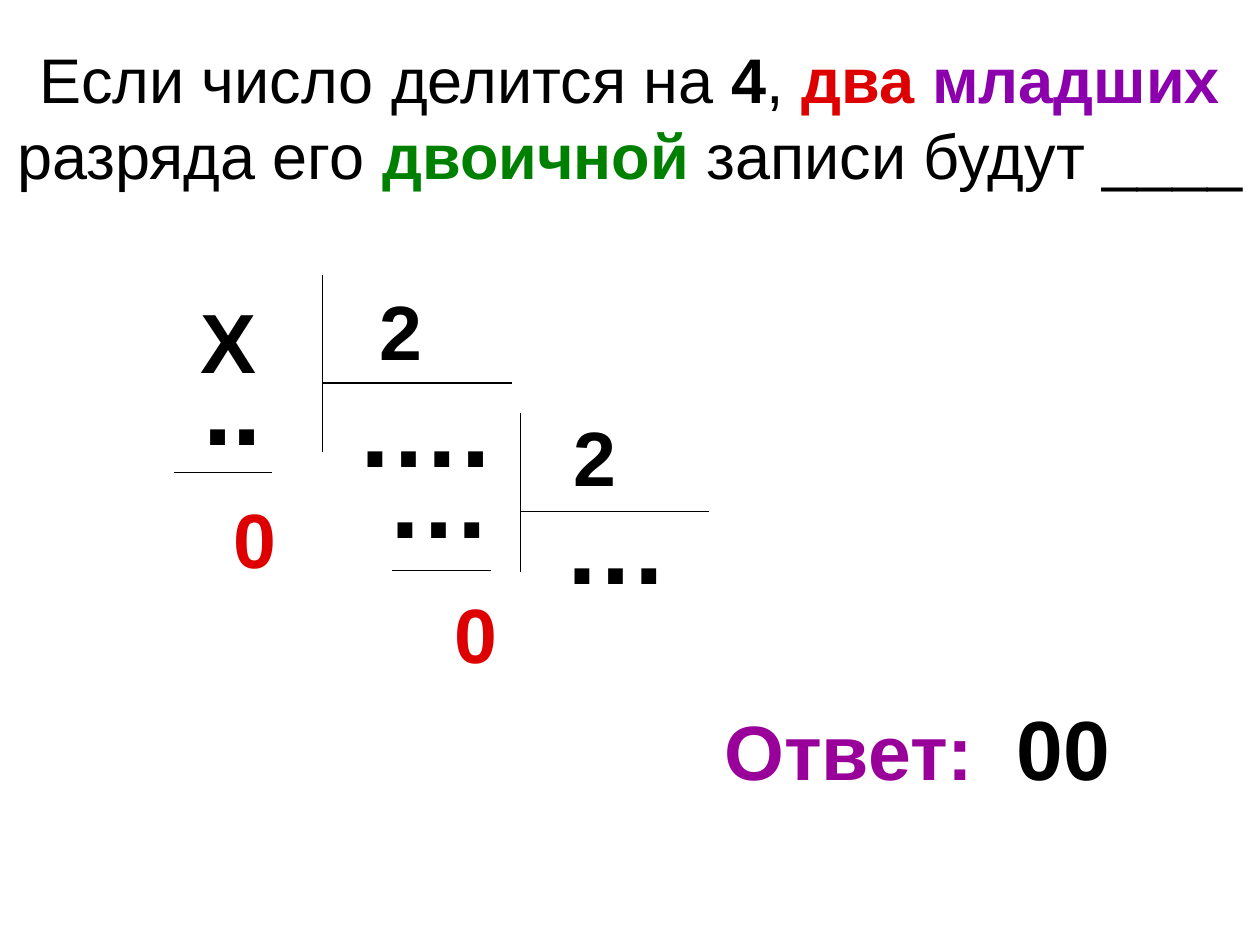
from pptx import Presentation
from pptx.dml.color import RGBColor
from pptx.enum.shapes import MSO_CONNECTOR as Connector
from pptx.enum.text import MSO_ANCHOR as Anchor, PP_ALIGN as Align
from pptx.oxml.ns import qn
from pptx.util import Inches, Pt
from lxml.etree import SubElement

BLACK = RGBColor(0x00, 0x00, 0x00)
RED = RGBColor(0xDE, 0x00, 0x00)
VIOLET = RGBColor(0x8B, 0x00, 0xAC)
GREEN = RGBColor(0x00, 0x80, 0x00)
PURPLE = RGBColor(0x99, 0x00, 0x99)

TITLE_RUNS = [
    ("Если число делится на ", 36, BLACK, False),
    ("4", 36, BLACK, True),
    (", ", 36, BLACK, False),
    ("два ", 36, RED, True),
    ("младших", 36, VIOLET, True),
    (" разряда его ", 36, BLACK, False),
    ("двоичной", 36, GREEN, True),
    (" записи будут ____", 36, BLACK, False),
]
ANSWER_RUNS = [("Ответ:  ", 44, PURPLE, True), ("00", 48, BLACK, True)]

DIVISION_TEXTS = [
    ("Х", 1.38, 2.25, 0.87, 0.9, 48, BLACK, Align.CENTER),
    ("2", 2.75, 2.2, 0.87, 0.83, 44, BLACK, Align.CENTER),
    ("….", 2.61, 2.83, 1.5, 1.1, 60, BLACK, Align.CENTER),
    ("..", 1.3, 2.65, 1.1, 1.1, 60, BLACK, Align.CENTER),
    ("0", 1.59, 3.85, 0.87, 0.83, 44, RED, Align.CENTER),
    ("2", 4.29, 3.2, 0.87, 0.83, 44, BLACK, Align.CENTER),
    ("…", 2.97, 3.39, 0.79, 1.1, 60, BLACK, Align.RIGHT),
    ("0", 3.34, 4.61, 0.87, 0.83, 44, RED, Align.CENTER),
    ("…", 4.37, 3.76, 0.79, 1.1, 60, BLACK, Align.RIGHT),
]
DIVISION_LINES = [
    (2.56, 2.18, 2.56, 3.59),
    (2.56, 3.04, 4.06, 3.04),
    (1.38, 3.75, 2.16, 3.75),
    (4.13, 3.28, 4.13, 4.54),
    (4.13, 4.06, 5.63, 4.06),
    (3.11, 4.53, 3.9, 4.53),
]


def add_text(slide, runs, left, top, width, height, align=Align.CENTER, anchor=Anchor.TOP):
    shape = slide.shapes.add_textbox(Inches(left), Inches(top), Inches(width), Inches(height))
    text_frame = shape.text_frame
    text_frame.word_wrap = True
    text_frame.vertical_anchor = anchor
    paragraph = text_frame.paragraphs[0]
    paragraph.alignment = align
    for text, size, color, bold in runs:
        run = paragraph.add_run()
        run.text = text
        run.font.name = "Arial"
        run.font.size = Pt(size)
        run.font.bold = bold
        run.font.color.rgb = color


def add_line(slide, left, top, right, bottom):
    line = slide.shapes.add_connector(
        Connector.STRAIGHT, Inches(left), Inches(top), Inches(right), Inches(bottom)
    )
    line.line.color.rgb = BLACK
    line.line.width = Pt(0.75)
    SubElement(line._element.spPr, qn("a:effectLst"))


def main():
    presentation = Presentation()
    presentation.slide_width = Inches(10)
    presentation.slide_height = Inches(7.5)
    slide = presentation.slides.add_slide(presentation.slide_layouts[6])

    add_text(slide, TITLE_RUNS, 0, 0.3, 10, 1.25, anchor=Anchor.MIDDLE)
    for text, left, top, width, height, size, color, align in DIVISION_TEXTS:
        add_text(slide, [(text, size, color, True)], left, top, width, height, align)
    for ends in DIVISION_LINES:
        add_line(slide, *ends)
    add_text(slide, ANSWER_RUNS, 5.47, 5.48, 3.62, 0.9)

    presentation.save("out.pptx")


if __name__ == "__main__":
    main()
